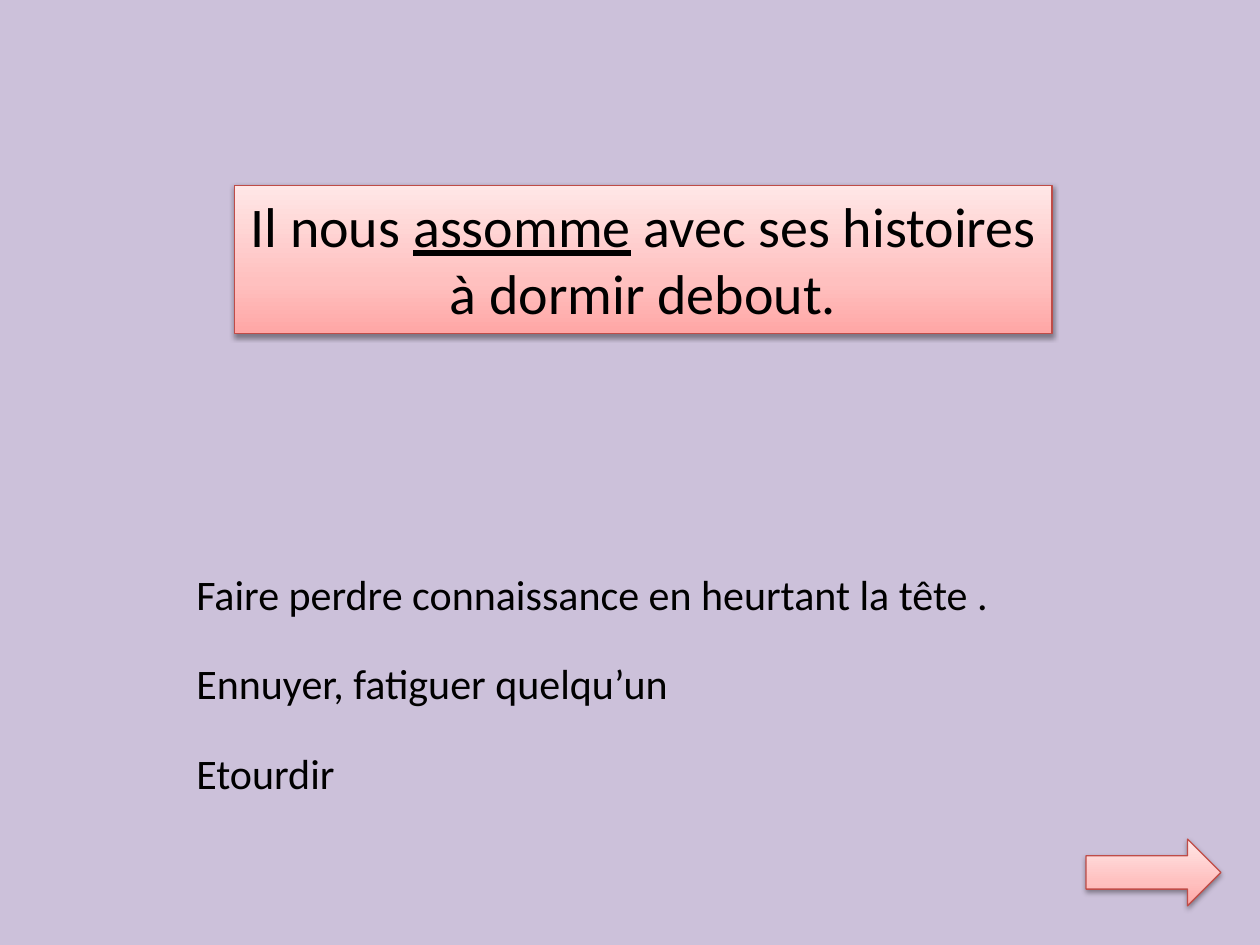
from copy import deepcopy

from lxml.etree import SubElement
from pptx import Presentation
from pptx.dml.color import RGBColor
from pptx.enum.shapes import MSO_SHAPE
from pptx.enum.text import MSO_ANCHOR, MSO_AUTO_SIZE, PP_ALIGN
from pptx.oxml.ns import qn
from pptx.util import Inches, Pt

LAVENDER = RGBColor(0xCC, 0xC1, 0xDA)
RED = RGBColor(0xBF, 0x4C, 0x48)
BLACK = RGBColor(0, 0, 0)
PINK_STOPS = [
    (0, RGBColor(0xFF, 0xA6, 0xA5)),
    (0.35, RGBColor(0xFF, 0xC0, 0xBF)),
    (1, RGBColor(0xFF, 0xE7, 0xE7)),
]
FONT = "Calibri"

SENTENCE = [
    [("Il nous ", False), ("assomme", True), (" avec ses histoires", False)],
    [("à dormir debout.", False)],
]
DEFINITIONS = [
    ("Faire perdre connaissance en heurtant la tête .", 6.55),
    ("Ennuyer, fatiguer quelqu’un", 3.99),
    ("Etourdir", 1.31),
]
DEFINITION_LEFT, DEFINITION_TOP = 1.46, 4.46
DEFINITION_HEIGHT, DEFINITION_STEP = 0.5, 0.71


def add_pink_shape(slide, preset, left, top, width, height):
    shape = slide.shapes.add_shape(
        preset, Inches(left), Inches(top), Inches(width), Inches(height)
    )
    shape.fill.gradient()
    shape.fill.gradient_angle = 90
    stop_list = shape._element.spPr.find(qn("a:gradFill")).find(qn("a:gsLst"))
    stop_list.insert(1, deepcopy(stop_list[0]))
    for stop, (position, color) in zip(shape.fill.gradient_stops, PINK_STOPS):
        stop.position = position
        stop.color.rgb = color
    shape.line.color.rgb = RED
    shape.line.width = Pt(0.75)
    shape.shadow.inherit = False
    effects = shape._element.spPr.find(qn("a:effectLst"))
    shadow = SubElement(
        effects, qn("a:outerShdw"), blurRad=str(Pt(3.1)), dist=str(Pt(1.6)),
        dir="5400000", rotWithShape="0",
    )
    shadow_color = SubElement(shadow, qn("a:srgbClr"), val="000000")
    SubElement(shadow_color, qn("a:alpha"), val="38000")
    return shape


def format_run(run, size, underline=False):
    run.font.name = FONT
    run.font.size = Pt(size)
    run.font.color.rgb = BLACK
    run.font.underline = underline


def fit_to_text(text_frame):
    text_frame.word_wrap = False
    text_frame.auto_size = MSO_AUTO_SIZE.SHAPE_TO_FIT_TEXT
    text_frame.vertical_anchor = MSO_ANCHOR.TOP


presentation = Presentation()
presentation.slide_width = Inches(10)
presentation.slide_height = Inches(7.5)
slide = presentation.slides.add_slide(presentation.slide_layouts[6])
slide.background.fill.solid()
slide.background.fill.fore_color.rgb = LAVENDER

sentence_box = add_pink_shape(slide, MSO_SHAPE.RECTANGLE, 1.86, 1.47, 6.49, 1.18)
fit_to_text(sentence_box.text_frame)
for index, pieces in enumerate(SENTENCE):
    if index:
        paragraph = sentence_box.text_frame.add_paragraph()
    else:
        paragraph = sentence_box.text_frame.paragraphs[0]
    paragraph.alignment = PP_ALIGN.CENTER
    for text, underline in pieces:
        run = paragraph.add_run()
        run.text = text
        format_run(run, 32, underline)

add_pink_shape(slide, MSO_SHAPE.RIGHT_ARROW, 8.62, 6.66, 1.07, 0.53)

for index, (text, width) in enumerate(DEFINITIONS):
    definition_box = slide.shapes.add_textbox(
        Inches(DEFINITION_LEFT),
        Inches(DEFINITION_TOP + index * DEFINITION_STEP),
        Inches(width),
        Inches(DEFINITION_HEIGHT),
    )
    definition_box.text_frame.text = text
    fit_to_text(definition_box.text_frame)
    format_run(definition_box.text_frame.paragraphs[0].runs[0], 24)

presentation.save("out.pptx")
